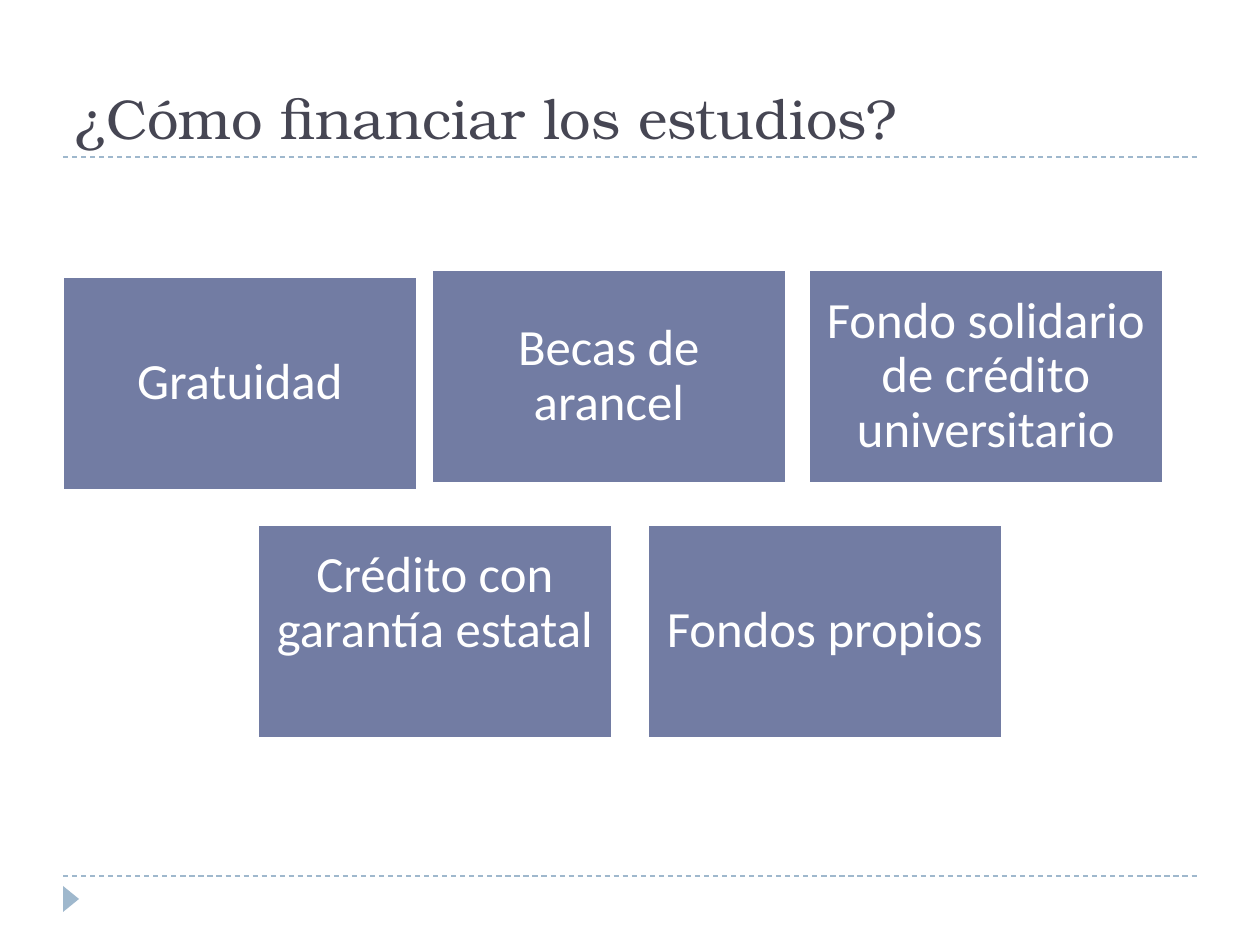
from lxml import etree
from pptx import Presentation, util as u
from pptx.dml.color import RGBColor
from pptx.enum import dml, shapes, text
from pptx.oxml.ns import qn

TITLE = "¿Cómo financiar los estudios?"
BOX_W, BOX_H, INSET = 354, 213, 15
# text, left, top, extra space below the text
OPTIONS = [
    ("Gratuidad", 63, 277, 0),
    ("Becas de arancel", 432, 270, 0),
    ("Fondo solidario de crédito universitario", 809, 270, 0),
    ("Crédito con garantía estatal", 258, 525, 55),
    ("Fondos propios", 648, 525, 0),
]
RULES_Y = [157, 876]
RULE_LEFT, RULE_RIGHT = 63, 1197
COLORS = {"title": "464653", "box": "727CA3", "accent": "9FB8CD", "white": "FFFFFF"}


def px(n):
    return u.Emu(round(n * 914400 / 126))


def color(name):
    return RGBColor.from_string(COLORS[name])


def set_text(sp, content, font, size, fill, align, insets, **frame):
    tf = sp.text_frame
    sides = ("left", "top", "right", "bottom")
    margins = {f"margin_{side}": px(n) for side, n in zip(sides, insets)}
    for key, value in {"word_wrap": True, **margins, **frame}.items():
        setattr(tf, key, value)
    p = tf.paragraphs[0]
    p.alignment = align
    r = p.add_run()
    r.text = content
    r.font.name, r.font.size = font, u.Pt(size)
    r.font.color.rgb = color(fill)
    return p


def add_filled(s, kind, box, fill):
    sp = s.shapes.add_shape(kind, *map(px, box))
    sp.shadow.inherit = False
    sp.fill.solid()
    sp.fill.fore_color.rgb = color(fill)
    sp.line.fill.background()
    return sp


def add_rule(s, y):
    line = s.shapes.add_connector(
        shapes.MSO_CONNECTOR.STRAIGHT, px(RULE_LEFT), px(y), px(RULE_RIGHT), px(y))
    line.line.color.rgb = color("accent")
    line.line.width = u.Pt(0.75)
    line.line.dash_style = dml.MSO_LINE.DASH
    etree.SubElement(line._element.spPr, qn("a:effectLst"))


def add_option(s, content, left, top, below):
    sp = add_filled(s, shapes.MSO_SHAPE.RECTANGLE, (left, top, BOX_W, BOX_H), "box")
    sp.line.color.rgb = color("white")
    sp.line.width = u.Pt(1.5)
    p = set_text(sp, content, "Calibri", 29, "white", text.PP_ALIGN.CENTER,
                 (INSET, INSET, INSET, INSET + below),
                 vertical_anchor=text.MSO_ANCHOR.MIDDLE)
    p.line_spacing = 0.9


def main():
    prs = Presentation()
    prs.slide_width, prs.slide_height = px(1260), px(945)
    s = prs.slides.add_slide(prs.slide_layouts[6])
    for y in RULES_Y:
        add_rule(s, y)
    marker = add_filled(s, shapes.MSO_SHAPE.ISOSCELES_TRIANGLE, (58, 891, 26, 16), "accent")
    marker.rotation = 90
    title = s.shapes.add_textbox(*map(px, (63, 21, 1134, 136)))
    set_text(title, TITLE, "TeX Gyre Bonum", 32, "title", text.PP_ALIGN.LEFT,
             (13, 6, 13, 6), vertical_anchor=text.MSO_ANCHOR.BOTTOM)
    for option in OPTIONS:
        add_option(s, *option)
    prs.save("out.pptx")


if __name__ == "__main__":
    main()
